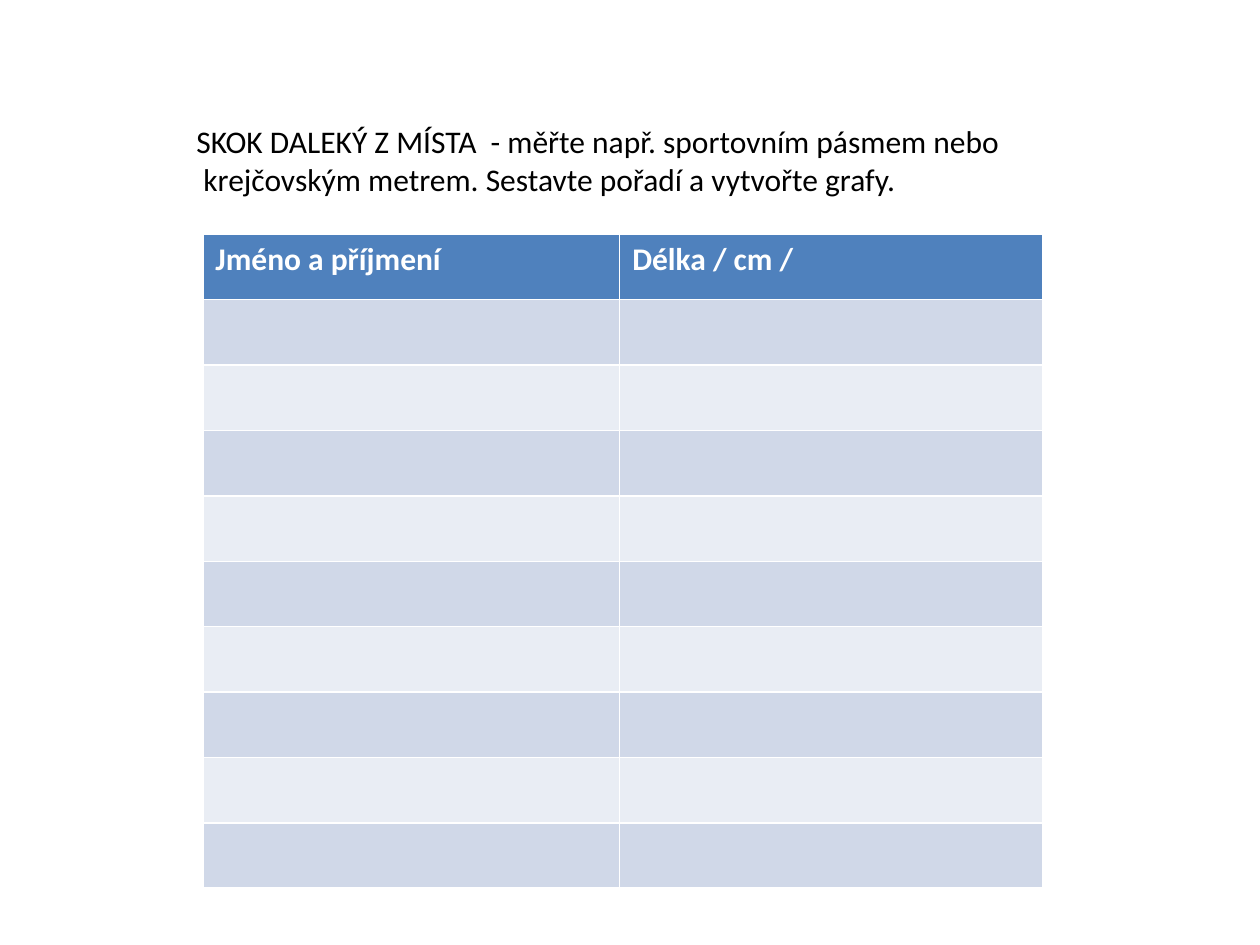
from pptx import Presentation
from pptx.dml.color import RGBColor
from pptx.enum.text import MSO_AUTO_SIZE
from pptx.util import Inches, Pt

BLACK = RGBColor(0x00, 0x00, 0x00)
WHITE = RGBColor(0xFF, 0xFF, 0xFF)
HEADER_BLUE = RGBColor(0x4F, 0x81, 0xBD)
BAND_DARK = RGBColor(0xD0, 0xD8, 0xE8)
BAND_LIGHT = RGBColor(0xE9, 0xED, 0xF4)

INSTRUCTIONS = [
    "SKOK DALEKÝ Z MÍSTA  - měřte např. sportovním pásmem nebo",
    " krejčovským metrem. Sestavte pořadí a vytvořte grafy.",
]
HEADINGS = ["Jméno a příjmení", "Délka / cm /"]
COLUMN_SHARES = [0.496, 0.504]
ROW_COUNT = 10


def format_text(para, color, bold=False):
    for span in para.runs:
        span.font.name = "Calibri"
        span.font.size = Pt(18)
        span.font.bold = bold
        span.font.color.rgb = color


def add_instructions(slide, left, top, width, height):
    box = slide.shapes.add_textbox(left, top, width, height)
    frame = box.text_frame
    frame.text = "\n".join(INSTRUCTIONS)
    frame.word_wrap = False
    frame.auto_size = MSO_AUTO_SIZE.SHAPE_TO_FIT_TEXT
    for para in frame.paragraphs:
        format_text(para, BLACK)


def add_results_table(slide, left, top, width, height):
    # The default table style supplies the white cell borders
    table = slide.shapes.add_table(
        ROW_COUNT, len(HEADINGS), left, top, width, height).table
    for column, share in zip(table.columns, COLUMN_SHARES):
        column.width = int(width * share)

    # Header row, then alternating bands for the entries
    for index, row in enumerate(table.rows):
        row.height = height // ROW_COUNT
        band = BAND_DARK if index % 2 else BAND_LIGHT
        for cell in row.cells:
            cell.fill.solid()
            cell.fill.fore_color.rgb = band if index else HEADER_BLUE
    for cell, heading in zip(table.rows[0].cells, HEADINGS):
        cell.text = heading
        format_text(cell.text_frame.paragraphs[0], WHITE, bold=True)


def main():
    deck = Presentation()
    deck.slide_width, deck.slide_height = Inches(10), Inches(7.5)
    slide = deck.slides.add_slide(deck.slide_layouts[6])
    add_instructions(slide, Inches(1.46), Inches(0.92), Inches(6.65), Inches(0.71))
    add_results_table(slide, Inches(1.61), Inches(1.86), Inches(6.67), Inches(5.19))
    deck.save("out.pptx")


if __name__ == "__main__":
    main()
